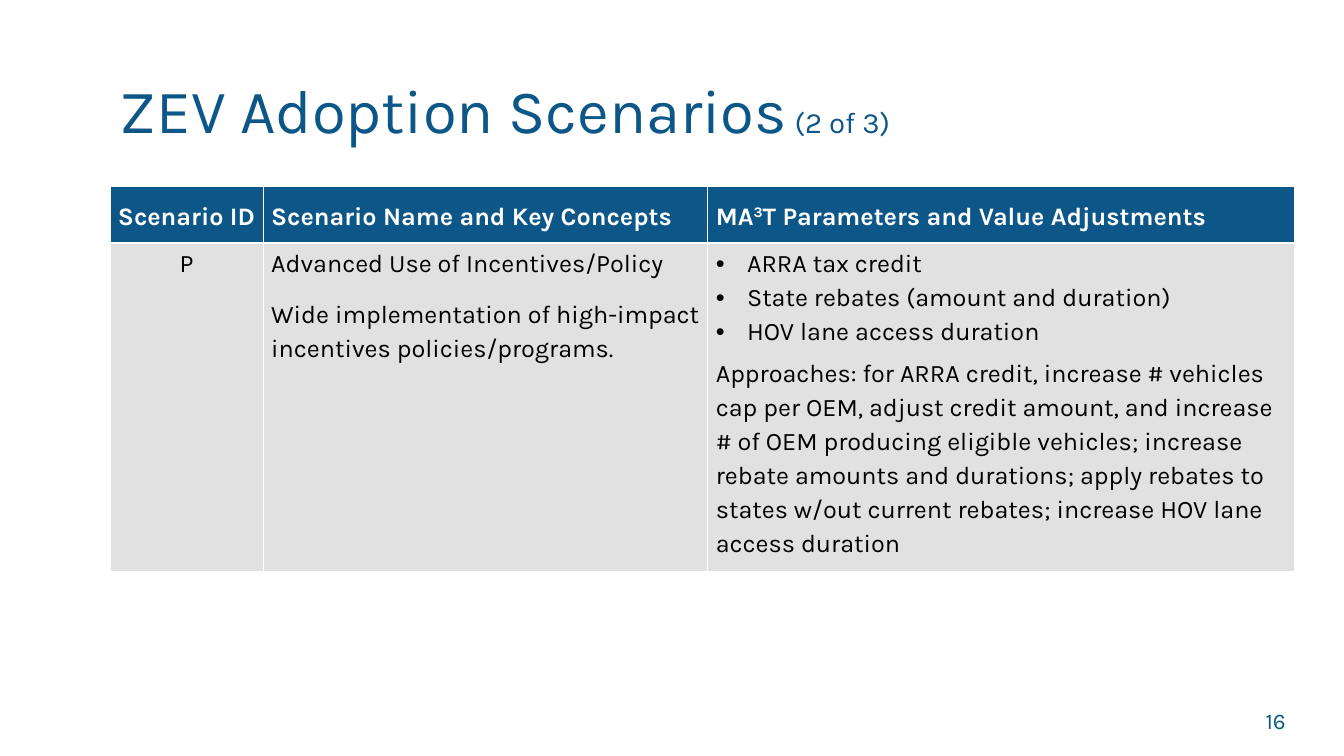
"""Build the slide of ZEV adoption scenarios with its parameter table."""
from lxml import etree
from pptx import Presentation
from pptx import util as u
from pptx.dml.color import RGBColor
from pptx.enum import text
from pptx.oxml.ns import qn

COLORS = {"blue": "0C5788", "white": "FFFFFF", "black": "000000", "gray": "E1E1E1"}
FONT = "Karla"
COLUMNS = [1.52, 4.41, 5.82]
ROWS = [0.56, 3.26]
MARGINS = {"margin_left": 0.08, "margin_right": 0.08, "margin_top": 0.02, "margin_bottom": 0.02}
BODY = {"line_spacing": 1.15, "space_before": u.Pt(6), "space_after": u.Pt(6)}
BULLET = {"line_spacing": 1.15, "space_before": u.Pt(0), "space_after": u.Pt(0)}

HEADERS = [
    [("Scenario ID", 0)],
    [("Scenario Name and Key Concepts", 0)],
    [("MA", 0), ("3", 30), ("T Parameters and Value Adjustments", 0)],
]
CONCEPTS = [
    "Advanced Use of Incentives/Policy",
    "Wide implementation of high-impact incentives policies/programs.",
]
PARAMETERS = ["ARRA tax credit", "State rebates (amount and duration)", "HOV lane access duration"]
APPROACHES = (
    "Approaches: for ARRA credit, increase # vehicles cap per OEM, adjust credit amount, "
    "and increase # of OEM producing eligible vehicles; increase rebate amounts and durations; "
    "apply rebates to states w/out current rebates; increase HOV lane access duration"
)


def set_all(target, values):
    for name, value in values.items():
        setattr(target, name, value)


def add_span(para, words, size, color, bold=False, raised=0):
    span = para.add_run()
    span.text = words
    set_all(span.font, {"name": FONT, "size": u.Pt(size), "bold": bold})
    span.font.color.rgb = RGBColor.from_string(COLORS[color])
    if raised:
        span.font._element.set("baseline", str(raised * 1000))


def add_bullet(para):
    props = para._p.get_or_add_pPr()
    indent = u.Inches(0.31)
    props.set("marL", str(indent))
    props.set("indent", str(-indent))
    etree.SubElement(props, qn("a:buFont")).set("typeface", "Arial")
    etree.SubElement(props, qn("a:buChar")).set("char", "•")


def add_borders(cell):
    props = cell._tc.get_or_add_tcPr()
    for side in ("lnL", "lnR", "lnT", "lnB"):
        line = etree.SubElement(props, qn(f"a:{side}"), w=str(u.Pt(1)))
        fill = etree.SubElement(line, qn("a:solidFill"))
        etree.SubElement(fill, qn("a:srgbClr"), val=COLORS["white"])


def fill_cell(cell, paragraphs, fill, color, anchor, align=text.PP_ALIGN.LEFT, bold=False, bullets=0):
    add_borders(cell)
    cell.fill.solid()
    cell.fill.fore_color.rgb = RGBColor.from_string(COLORS[fill])
    cell.vertical_anchor = anchor
    set_all(cell, {name: u.Inches(size) for name, size in MARGINS.items()})
    for index, spans in enumerate(paragraphs):
        para = cell.text_frame.add_paragraph() if index else cell.text_frame.paragraphs[0]
        if index < bullets:
            add_bullet(para)
        set_all(para, BULLET if index < bullets else BODY)
        para.alignment = align
        if index == 0:
            para.space_before = u.Pt(0)
        for words, raised in spans:
            add_span(para, words, 18, color, bold, raised)


def add_title(page):
    title = page.shapes.title
    set_all(title, {"left": u.Inches(1.09), "top": u.Inches(0.4),
                    "width": u.Inches(12.24), "height": u.Inches(1.45)})
    set_all(title.text_frame, {"vertical_anchor": text.MSO_ANCHOR.MIDDLE, "word_wrap": True,
                               "auto_size": text.MSO_AUTO_SIZE.NONE})
    para = title.text_frame.paragraphs[0]
    set_all(para, {"alignment": text.PP_ALIGN.LEFT, "line_spacing": 0.9})
    for words, size in [("ZEV Adoption Scenarios", 44), (" ", 20), ("(2 of 3)", 21)]:
        add_span(para, words, size, "blue")


def add_page_number(page):
    box = page.shapes.add_textbox(u.Inches(9.85), u.Inches(6.95), u.Inches(3), u.Inches(0.4))
    set_all(box.text_frame, {"word_wrap": True, "vertical_anchor": text.MSO_ANCHOR.MIDDLE})
    para = box.text_frame.paragraphs[0]
    para.alignment = text.PP_ALIGN.RIGHT
    add_span(para, "16", 16, "blue")


def add_scenario_table(page):
    table = page.shapes.add_table(len(ROWS), len(COLUMNS), u.Inches(1.09), u.Inches(1.85),
                                  u.Inches(sum(COLUMNS)), u.Inches(sum(ROWS))).table
    table.horz_banding = False
    for column, width in zip(table.columns, COLUMNS):
        column.width = u.Inches(width)
    for row, height in zip(table.rows, ROWS):
        row.height = u.Inches(height)
    for index, spans in enumerate(HEADERS):
        fill_cell(table.cell(0, index), [spans], "blue", "white", text.MSO_ANCHOR.MIDDLE, bold=True)
    contents = [
        (["P"], {"align": text.PP_ALIGN.CENTER}),
        (CONCEPTS, {}),
        (PARAMETERS + [APPROACHES], {"bullets": len(PARAMETERS)}),
    ]
    for index, (lines, options) in enumerate(contents):
        fill_cell(table.cell(1, index), [[(line, 0)] for line in lines],
                  "gray", "black", text.MSO_ANCHOR.TOP, **options)


def main():
    deck = Presentation()
    set_all(deck, {"slide_width": u.Inches(13.33), "slide_height": u.Inches(7.5)})
    page = deck.slides.add_slide(deck.slide_layouts[5])
    add_title(page)
    add_page_number(page)
    add_scenario_table(page)
    deck.save("out.pptx")


if __name__ == "__main__":
    main()
